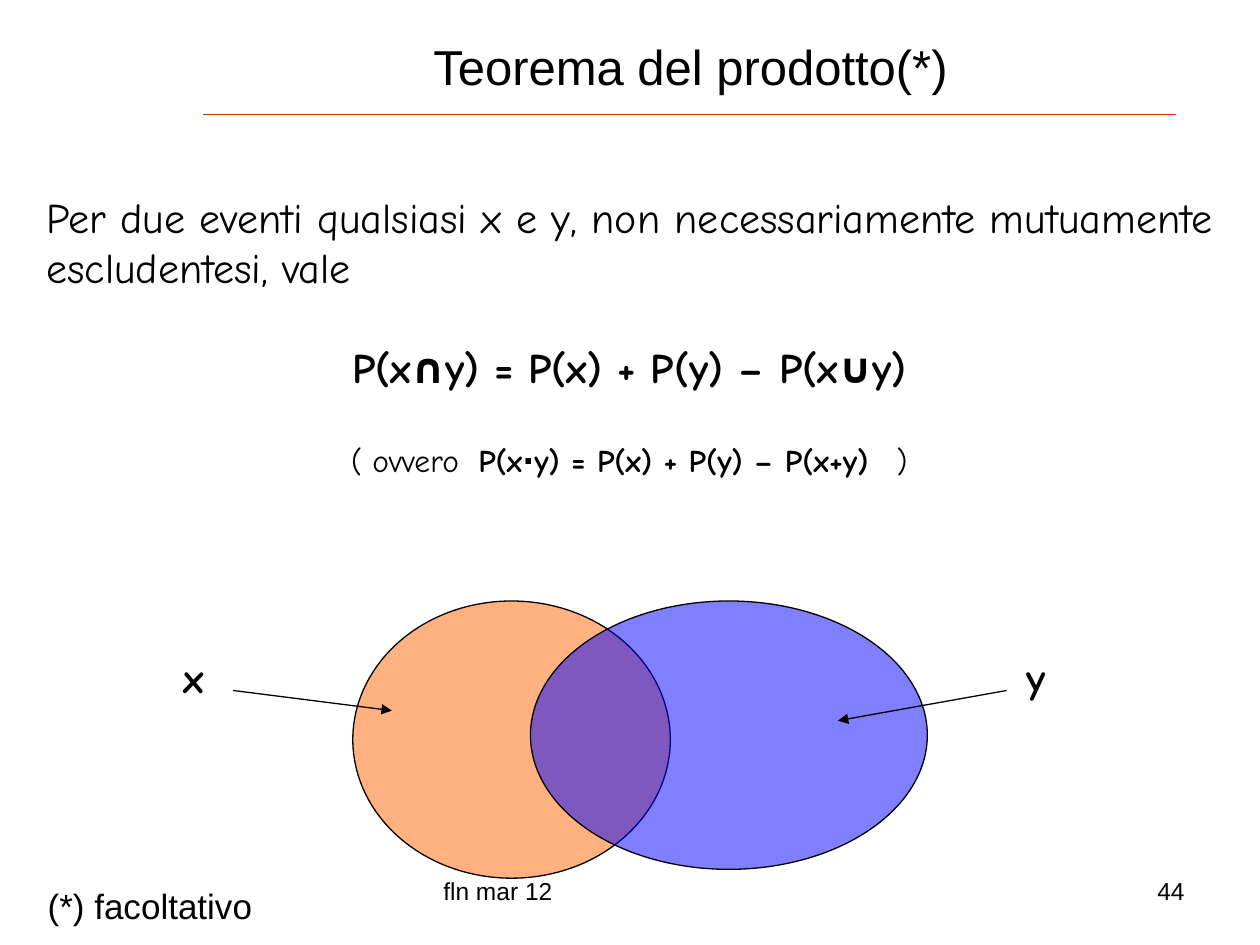
from dataclasses import dataclass

from lxml.etree import SubElement
from pptx import Presentation
from pptx.dml.color import RGBColor
from pptx.enum.shapes import MSO_CONNECTOR as Connector, MSO_SHAPE as Shape
from pptx.enum.text import MSO_ANCHOR as Anchor, MSO_AUTO_SIZE as AutoSize, PP_ALIGN as Align
from pptx.oxml.ns import qn
from pptx.util import Inches, Pt

COLORS = {"ink": "000000", "rule": "CC3300", "x": "FF6600", "y": "0000FF"}
SANS, COMIC = "Arial", "Comic Neue"
CELL = 0.1
COLUMNS, ROWS = 100, 75


@dataclass
class Box:
    """A rectangle counted in grid cells."""
    left: float
    top: float
    width: float
    height: float

    def inner(self, left, top, width, height):
        """Return a box offset from this one's corner."""
        return Box(self.left + left, self.top + top, width, height)

    def lengths(self):
        """Return left, top, width and height as slide lengths."""
        return [cells(n) for n in (self.left, self.top, self.width, self.height)]


def cells(count):
    """Turn a count of grid cells into a length."""
    return Inches(count * CELL)


def color(name):
    """Look up a palette colour."""
    return RGBColor.from_string(COLORS[name])


def move(shape, box):
    """Place an existing shape on a box."""
    shape.left, shape.top, shape.width, shape.height = box.lengths()


def add_span(para, text, size, font=SANS, bold=False, spacing=0):
    """Add one formatted run, with optional letter spacing in points."""
    span = para.add_run()
    span.text = text
    span.font.size, span.font.name, span.font.bold = Pt(size), font, bold
    span.font.color.rgb = color("ink")
    if spacing:
        span.font._element.set("spc", str(spacing * 100))


def add_label(page, box, text, size, font=SANS, bold=False, align=Align.LEFT, wrap=True):
    """Add a one-line text box."""
    frame = page.shapes.add_textbox(*box.lengths()).text_frame
    frame.word_wrap = wrap
    frame.paragraphs[0].alignment = align
    add_span(frame.paragraphs[0], text, size, font, bold)


def add_line(page, box, start, end, name, arrow=False):
    """Draw a thin line between two points of a box."""
    points = [cells(n) for x, y in (start, end) for n in (box.left + x, box.top + y)]
    line = page.shapes.add_connector(Connector.STRAIGHT, *points)
    line.line.color.rgb, line.line.width = color(name), Pt(0.75)
    if arrow:
        SubElement(line.line._get_or_add_ln(), qn("a:tailEnd"), type="triangle")
    SubElement(line._element.spPr, qn("a:effectLst"))


def add_heading(page, box):
    """Fill the title and underline it."""
    title = page.shapes.title
    move(title, box)
    frame = title.text_frame
    frame.vertical_anchor, frame.auto_size = Anchor.MIDDLE, AutoSize.NONE
    frame.paragraphs[0].alignment = Align.CENTER
    add_span(frame.paragraphs[0], "Teorema del prodotto(*)", 28)
    add_line(page, box, (0.8, 7), (78, 7), "rule")


def add_theorem(page, box):
    """Fill the body with the statement and its two formulas."""
    body = page.placeholders[1]
    move(body, box)
    frame = body.text_frame
    frame.auto_size = AutoSize.NONE
    statement = ("Per due eventi qualsiasi x e y, non necessariamente "
                 "mutuamente escludentesi, vale")
    content = [
        (Align.JUSTIFY, 0, [(statement, 24, COMIC)]),
        (Align.CENTER, 28, [("P(x∩y) = P(x) + P(y) – P(x∪y)", 24, COMIC, True)]),
        (Align.CENTER, 28, [
            ("( ovvero", 18, COMIC), (" ", 18, COMIC, False, 5),
            ("P(x", 18, COMIC, True), ("⋅", 18, SANS, True),
            ("y) = P(x) + P(y) – P(x+y)", 18, COMIC, True),
            (" ", 18, COMIC, False, 10), (")", 18, COMIC)]),
    ]
    for index, (align, before, spans) in enumerate(content):
        para = frame.add_paragraph() if index else frame.paragraphs[0]
        para.alignment, para.space_before = align, Pt(before)
        props = para._p.get_or_add_pPr()
        props.set("marL", "0")
        props.set("indent", "0")
        SubElement(props, qn("a:buNone"))
        for span in spans:
            add_span(para, *span)


def add_event(page, box, name):
    """Draw one half-transparent event ellipse."""
    event = page.shapes.add_shape(Shape.OVAL, *box.lengths())
    event.shadow.inherit = False
    event.fill.solid()
    event.fill.fore_color.rgb = color(name)
    shade = event._element.spPr.find(qn("a:solidFill"))[0]
    SubElement(shade, qn("a:alpha"), val="50000")
    event.line.color.rgb, event.line.width = color("ink"), Pt(0.75)


def add_venn(page, box):
    """Draw the two overlapping events with their labels and arrows."""
    events = [
        ("x", (14.4, 0, 25.2, 22), 0, (4.9, 7.1), (17.5, 8.7)),
        ("y", (28.5, 0, 31.5, 21.3), 66.9, (66.3, 7.1), (52.9, 9.5)),
    ]
    for name, ellipse, *_ in events:
        add_event(page, box.inner(*ellipse), name)
    for name, _, label, start, end in events:
        add_label(page, box.inner(label, 3.5, 4, 5), name, 24, COMIC, True, wrap=False)
        add_line(page, box, start, end, "ink", arrow=True)


def add_footer(page, box):
    """Write the date, the page number and the footnote."""
    add_label(page, box.inner(31.5, 0, 31.7, 4.5), "fln mar 12", 14)
    add_label(page, box.inner(69, 0, 23.3, 4.5), "44", 14, align=Align.RIGHT)
    add_label(page, box.inner(0, 0.7, 18.4, 4.4), "(*) facoltativo", 20,
              align=Align.CENTER, wrap=False)


def main():
    """Build and save the slide."""
    deck = Presentation()
    deck.slide_width, deck.slide_height = cells(COLUMNS), cells(ROWS)
    page = deck.slides.add_slide(deck.slide_layouts[1])
    add_heading(page, Box(15.3, 2.1, 79, 6.3))
    add_theorem(page, Box(2.7, 14.7, 94.5, 28))
    add_venn(page, Box(13.6, 47.7, 70.8, 22))
    add_footer(page, Box(2.7, 69, 92.3, 5.1))
    deck.save("out.pptx")


if __name__ == "__main__":
    main()
